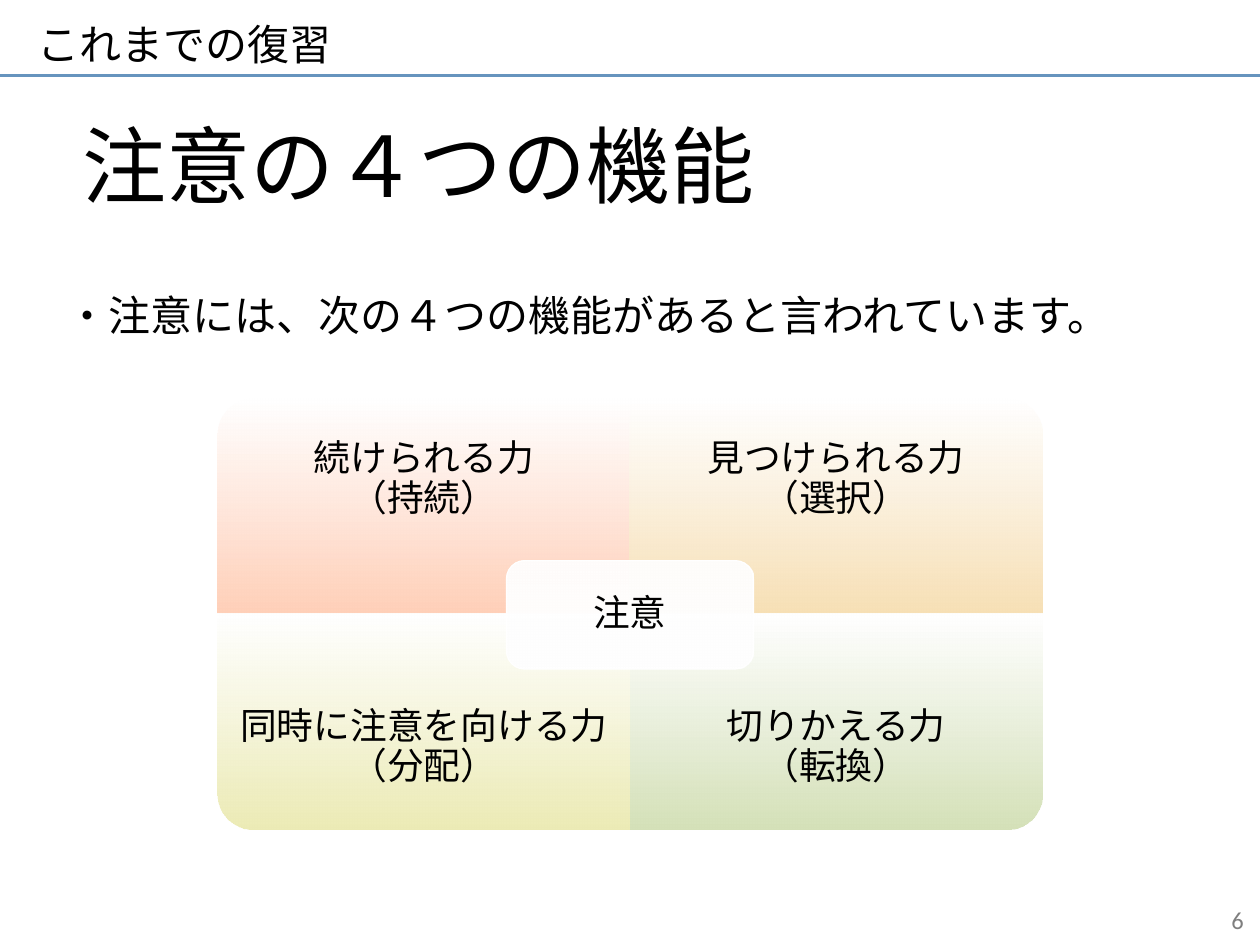
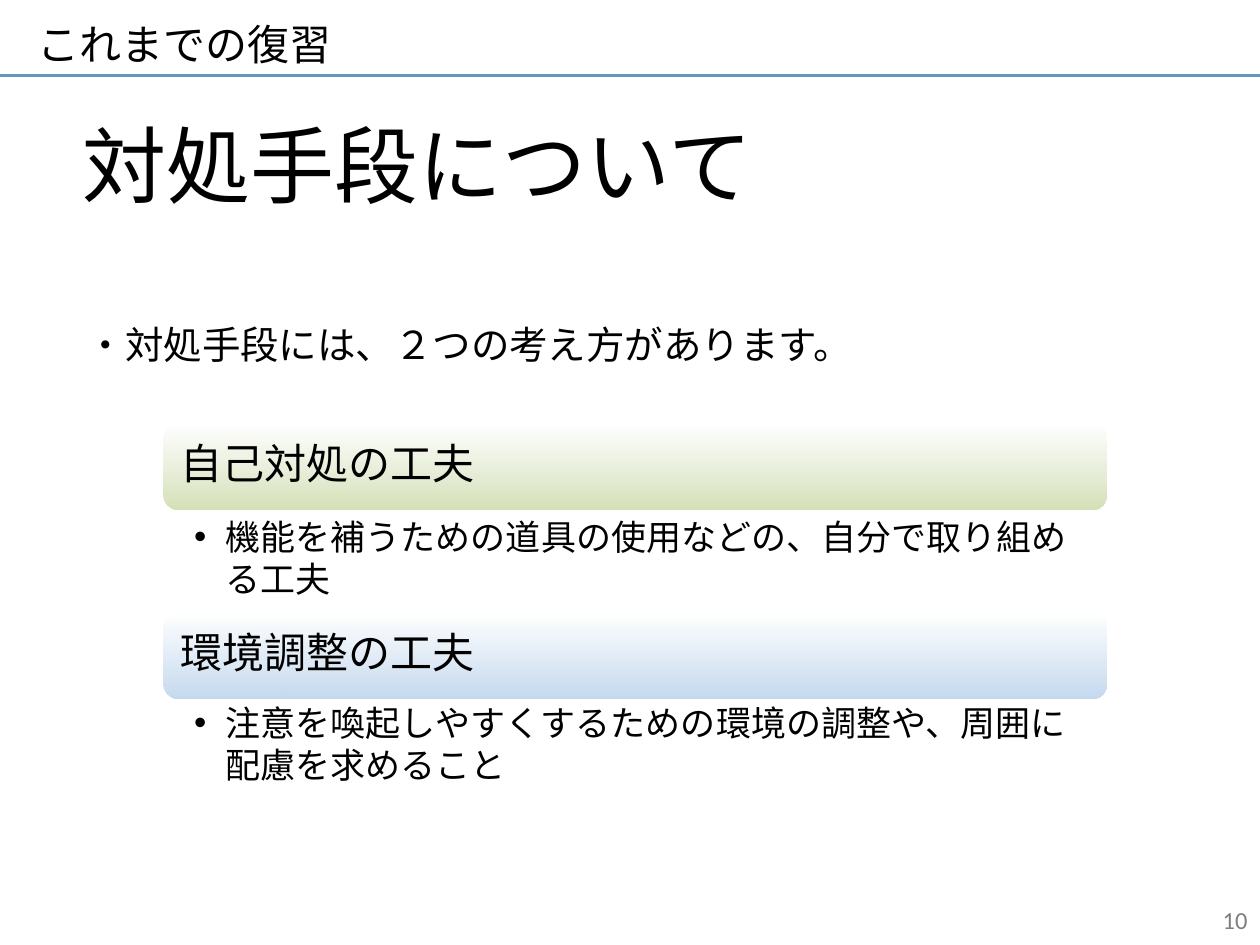
from dataclasses import dataclass

from lxml import etree
from pptx import Presentation
from pptx.dml.color import RGBColor
from pptx.enum.shapes import MSO_CONNECTOR, MSO_SHAPE
from pptx.enum.text import MSO_ANCHOR, PP_ALIGN
from pptx.oxml.ns import qn
from pptx.util import Inches, Pt

LEFT, CENTER, RIGHT = PP_ALIGN.LEFT, PP_ALIGN.CENTER, PP_ALIGN.RIGHT
TOP, MIDDLE = MSO_ANCHOR.TOP, MSO_ANCHOR.MIDDLE
STRAIGHT = MSO_CONNECTOR.STRAIGHT
ROUNDED, ONE_ROUND_CORNER = MSO_SHAPE.ROUNDED_RECTANGLE, MSO_SHAPE.ROUND_1_RECTANGLE


@dataclass(frozen=True)
class Theme:
    body_font: str = "Noto Sans CJK JP"
    number_font: str = "Calibri"
    text: str = "000000"
    number: str = "7F7F7F"
    rule: str = "6694BE"
    white: str = "FFFFFF"
    red: str = "FFD0B9"
    orange: str = "F7E0B6"
    yellow: str = "ECEBB6"
    green: str = "D5E1B9"
    blue: str = "C6DAEF"
    title_size: int = 48
    header_size: int = 24
    heading_size: int = 24
    quadrant_size: int = 21
    detail_size: int = 20
    number_size: int = 14


theme = Theme()


def write_text(shape, text, size, align=LEFT, anchor=MIDDLE, insets=(0.1, 0.05, 0.1, 0.05),
               spacing=1.0, font=theme.body_font, colour=theme.text, bullet_indent=None):
    """Fill a shape or text box with one styled paragraph."""
    frame = shape.text_frame
    frame.word_wrap = True
    frame.vertical_anchor = anchor
    frame.margin_left, frame.margin_top, frame.margin_right, frame.margin_bottom = map(Inches, insets)
    frame.text = text
    paragraph = frame.paragraphs[0]
    paragraph.alignment = align
    paragraph.line_spacing = spacing
    if bullet_indent:
        properties = paragraph._p.get_or_add_pPr()
        properties.set("marL", str(Inches(bullet_indent)))
        properties.set("indent", str(-Inches(bullet_indent)))
        etree.SubElement(properties, qn("a:buFont")).set("typeface", "Arial")
        etree.SubElement(properties, qn("a:buChar")).set("char", "•")
    paragraph.font.size = Pt(size)
    paragraph.font.color.rgb = RGBColor.from_string(colour)
    paragraph.font.name = font
    etree.SubElement(paragraph.font._element, qn("a:ea")).set("typeface", font)


def add_gradient_shape(slide, kind, box, colour, rotation=0):
    """Add a borderless shape that fades downwards from white to a colour."""
    shape = slide.shapes.add_shape(kind, *map(Inches, box))
    shape.rotation = rotation
    shape.shadow.inherit = False
    shape.line.fill.background()
    shape.fill.gradient()
    shape.fill.gradient_angle = 270
    for stop, stop_colour in zip(shape.fill.gradient_stops, (theme.white, colour)):
        stop.color.rgb = RGBColor.from_string(stop_colour)
    # Keep the fade vertical on rotated shapes; the white end is slightly transparent
    gradient = shape._element.spPr.find(qn("a:gradFill"))
    gradient.set("rotWithShape", "0")
    white_stop = next(gradient.iter(qn("a:srgbClr")))
    etree.SubElement(white_stop, qn("a:alpha")).set("val", "94000")
    return shape


presentation = Presentation()
presentation.slide_width = Inches(10)
presentation.slide_height = Inches(7.5)
blank_layout = presentation.slide_layouts[6]

# Shared frame: header, rule, title, lead sentence and page number
pages = [
    ("注意の４つの機能", "・注意には、次の４つの機能があると言われています。", 24, (0.43, 2.25), "6", 7.64),
    ("対処手段について", "・対処手段には、２つの考え方があります。", 22, (0.59, 2.5), "10", 7.67),
]
slides = []
for title, lead, lead_size, lead_position, number, number_left in pages:
    slide = presentation.slides.add_slide(blank_layout)
    slides.append(slide)

    rule = slide.shapes.add_connector(STRAIGHT, 0, Inches(0.6), Inches(10), Inches(0.6))
    rule.line.color.rgb = RGBColor.from_string(theme.rule)
    rule.line.width = Pt(1.5)
    etree.SubElement(rule._element.spPr, qn("a:effectLst"))

    header_box = slide.shapes.add_textbox(Inches(0.2), Inches(0.05), Inches(8.89), Inches(0.71))
    write_text(header_box, "これまでの復習", theme.header_size, spacing=0.6)

    title_box = slide.shapes.add_textbox(Inches(0.56), Inches(0.83), Inches(8.89), Inches(1.18))
    write_text(title_box, title, theme.title_size, spacing=0.6)

    lead_box = slide.shapes.add_textbox(*map(Inches, lead_position), Inches(9.2), Inches(0.6))
    write_text(lead_box, lead, lead_size, anchor=TOP)

    number_box = slide.shapes.add_textbox(Inches(number_left), Inches(7.1), Inches(2.33), Inches(0.4))
    write_text(number_box, number, theme.number_size, RIGHT,
               font=theme.number_font, colour=theme.number)

functions_slide, coping_slide = slides

# Four functions: quadrants around a centre, each with its outer corner rounded
center_x, center_y = 5, 4.87
quadrant_width, quadrant_height, label_height = 3.27, 1.71, 1.29
quadrants = [
    (0, 0, 270, theme.red, "続けられる力\v（持続）"),
    (1, 0, 0, theme.orange, "見つけられる力\v（選択）"),
    (0, 1, 180, theme.yellow, "同時に注意を向ける力\v（分配）"),
    (1, 1, 90, theme.green, "切りかえる力\v（転換）"),
]
for column, row, rotation, colour, label in quadrants:
    left = center_x + (column - 1) * quadrant_width
    top = center_y + (row - 1) * quadrant_height
    width, height = quadrant_width, quadrant_height
    if rotation in (90, 270):
        width, height = height, width
    box = (left + (quadrant_width - width) / 2, top + (quadrant_height - height) / 2, width, height)
    add_gradient_shape(functions_slide, ONE_ROUND_CORNER, box, colour, rotation)

    label_top = top + row * (quadrant_height - label_height)
    label_box = functions_slide.shapes.add_textbox(
        Inches(left), Inches(label_top), Inches(quadrant_width), Inches(label_height))
    write_text(label_box, label, theme.quadrant_size, CENTER, insets=[0.16] * 4, spacing=0.9)

attention = add_gradient_shape(functions_slide, ROUNDED, (4.02, 4.45, 1.96, 0.86), theme.white)
attention.line.color.rgb = RGBColor.from_string(theme.white)
attention.line.width = Pt(0.75)
write_text(attention, "注意", theme.quadrant_size, CENTER, spacing=0.9)

# Two coping approaches: a heading bar with its explanation below
approaches = [
    (3.36, 4.06, theme.green, "自己対処の工夫",
     "機能を補うための道具の使用などの、自分で取り組める工夫"),
    (4.86, 5.54, theme.blue, "環境調整の工夫",
     "注意を喚起しやすくするための環境の調整や、周囲に配慮を求めること"),
]
for bar_top, detail_top, colour, heading, detail in approaches:
    bar = add_gradient_shape(coping_slide, ROUNDED, (1.3, bar_top, 7.48, 0.68), colour)
    write_text(bar, heading, theme.heading_size, insets=(0.1, 0.1, 0.1, 0.1), spacing=0.9)

    detail_box = coping_slide.shapes.add_textbox(
        Inches(1.3), Inches(detail_top), Inches(7.48), Inches(0.8))
    write_text(detail_box, detail, theme.detail_size, anchor=TOP,
               insets=(0.24, 0.03, 0.16, 0.03), bullet_indent=0.25)

presentation.save("out.pptx")
